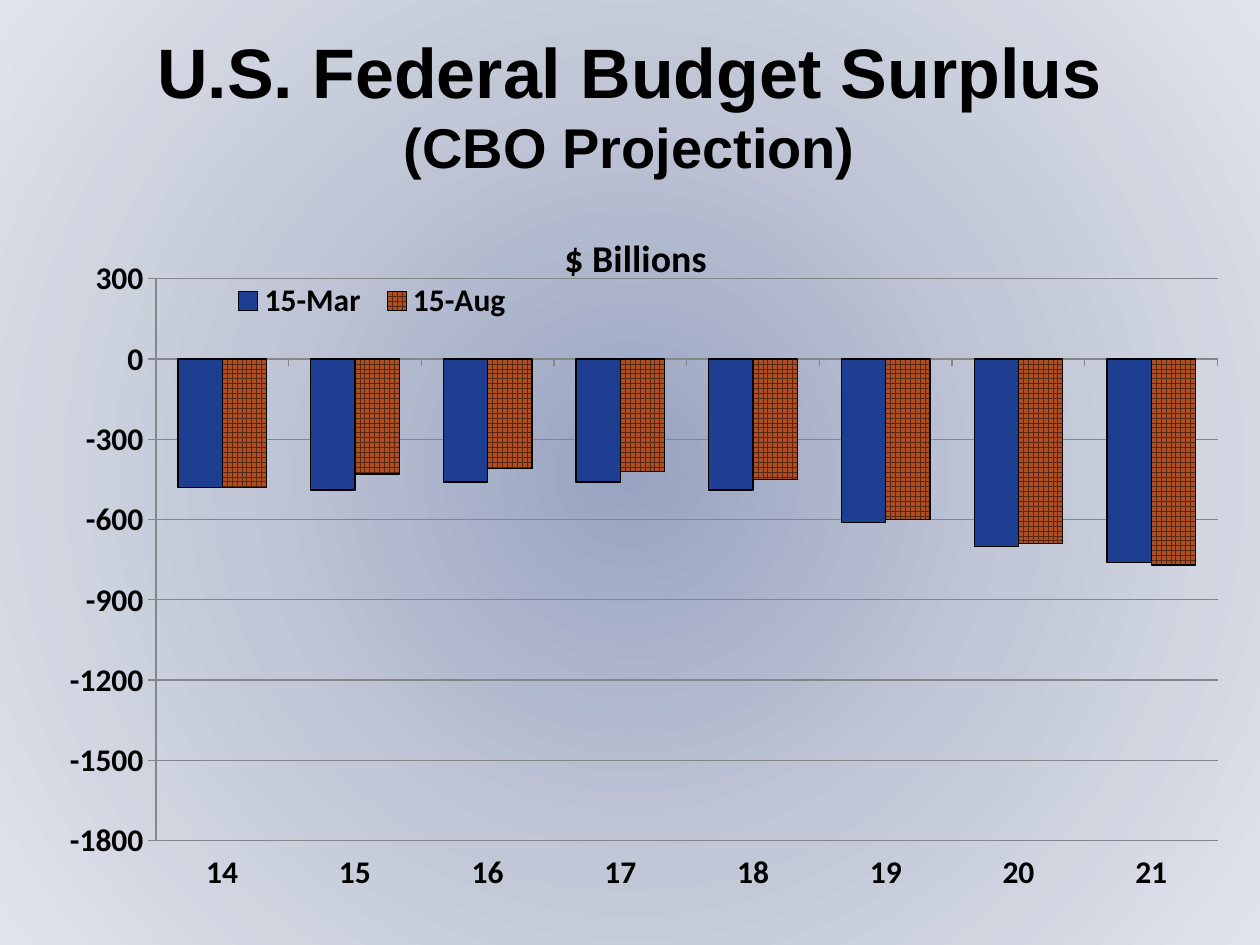
import lxml.etree
import pptx
import pptx.chart.data
import pptx.dml.color
import pptx.enum.chart
import pptx.enum.dml
import pptx.enum.text
import pptx.oxml
import pptx.oxml.ns
import pptx.util

Inches = pptx.util.Inches
Pt = pptx.util.Pt
RGBColor = pptx.dml.color.RGBColor
qn = pptx.oxml.ns.qn

BLACK = RGBColor(0x00, 0x00, 0x00)
GRAY = RGBColor(0x86, 0x86, 0x86)
BLUE = RGBColor(0x1E, 0x3E, 0x92)
RUST = RGBColor(0xAE, 0x4E, 0x22)
BROWN = RGBColor(0x57, 0x27, 0x11)
BACKDROP = [
    (0, RGBColor(0x98, 0xA3, 0xC1)),
    (50, RGBColor(0xC2, 0xC7, 0xD7)),
    (100, RGBColor(0xE1, 0xE4, 0xEB)),
]


def write_line(para, text, size, font="Arial", bold=True, color=BLACK):
    para.alignment = pptx.enum.text.PP_ALIGN.CENTER
    span = para.add_run()
    span.text = text
    span.font.size = Pt(size)
    span.font.name = font
    span.font.bold = bold
    span.font.color.rgb = color


def place_part(layout, **settings):
    for child in list(layout):
        layout.remove(child)
    manual = lxml.etree.SubElement(layout, qn("c:manualLayout"))
    for name, value in settings.items():
        lxml.etree.SubElement(manual, qn(f"c:{name}")).set("val", str(value))


deck = pptx.Presentation()
deck.slide_width = Inches(10)
deck.slide_height = Inches(7.5)
page = deck.slides.add_slide(deck.slide_layouts[6])

page.background.fill.gradient()
gradient = page.element.xpath(".//p:bg//a:gradFill")[0]
for child in list(gradient):
    gradient.remove(child)
stops = lxml.etree.SubElement(gradient, qn("a:gsLst"))
for position, color in BACKDROP:
    stop = lxml.etree.SubElement(stops, qn("a:gs"), pos=str(position * 1000))
    lxml.etree.SubElement(stop, qn("a:srgbClr"), val=str(color))
shade = lxml.etree.SubElement(gradient, qn("a:path"), path="circle")
center = {side: "50000" for side in "ltrb"}
lxml.etree.SubElement(shade, qn("a:fillToRect"), **center)

box = page.shapes.add_textbox(Inches(0.25), Inches(0.33), Inches(9.49), Inches(1))
box.text_frame.word_wrap = True
box.text_frame.vertical_anchor = pptx.enum.text.MSO_ANCHOR.MIDDLE
write_line(box.text_frame.paragraphs[0], "U.S. Federal Budget Surplus", size=40)
write_line(box.text_frame.add_paragraph(), "(CBO Projection)", size=32)

budget = pptx.chart.data.CategoryChartData(number_format="0")
budget.categories = [str(year) for year in range(14, 22)]
budget.add_series("15-Mar", [-480, -490, -460, -460, -490, -610, -700, -760])
budget.add_series("15-Aug", [-480, -430, -410, -420, -450, -600, -690, -770])
chart = page.shapes.add_chart(
    pptx.enum.chart.XL_CHART_TYPE.COLUMN_CLUSTERED,
    Inches(0.25), Inches(1.5), Inches(9.49), Inches(5.66), budget,
).chart
chart.font.size = Pt(18)
chart.font.name = "Calibri"
chart.font.bold = True
chart.font.color.rgb = BLACK

chart.has_title = True
title = chart.chart_title
write_line(title.text_frame.paragraphs[0], "$ Billions", size=21.6, font="Calibri")
title.include_in_layout = False

chart.has_legend = True
legend = chart.legend
legend.position = pptx.enum.chart.XL_LEGEND_POSITION.TOP
legend.include_in_layout = False

plot = chart.plots[0]
plot.gap_width = 100
plot.overlap = 0
plot.vary_by_categories = False
march, august = plot.series
march.format.fill.solid()
march.format.fill.fore_color.rgb = BLUE
august.format.fill.patterned()
august.format.fill.pattern = pptx.enum.dml.MSO_PATTERN.LARGE_GRID
august.format.fill.fore_color.rgb = BROWN
august.format.fill.back_color.rgb = RUST
for series in plot.series:
    series.invert_if_negative = False
    series.format.line.color.rgb = BLACK
    series.format.line.width = Pt(0.75)

years = chart.category_axis
years.tick_label_position = pptx.enum.chart.XL_TICK_LABEL_POSITION.LOW
amounts = chart.value_axis
amounts.minimum_scale = -1800
amounts.maximum_scale = 300
amounts.major_unit = 300
amounts.has_major_gridlines = True
amounts.tick_labels.number_format = "0"
amounts.tick_labels.number_format_is_linked = False
for axis in (years, amounts):
    axis.major_tick_mark = pptx.enum.chart.XL_TICK_MARK.OUTSIDE
    axis.minor_tick_mark = pptx.enum.chart.XL_TICK_MARK.NONE
for part in (years, amounts, amounts.major_gridlines):
    part.format.line.color.rgb = GRAY
    part.format.line.width = Pt(0.75)

parts = [
    ("c:title", "c:overlay", dict(xMode="edge", yMode="edge", x=0.44, y=0.05)),
    ("c:legend", "c:overlay",
     dict(xMode="edge", yMode="edge", x=0.16, y=0.13, w=0.25, h=0.05)),
    ("c:plotArea", "c:barChart",
     dict(layoutTarget="inner", xMode="edge", yMode="edge",
          x=0.104, y=0.126, w=0.888, h=0.788)),
]
for owner_tag, follower_tag, settings in parts:
    owner = next(chart.element.iter(qn(owner_tag)))
    layout = owner.find(qn("c:layout"))
    if layout is None:
        layout = pptx.oxml.parse_xml(
            f'<c:layout xmlns:c="{pptx.oxml.ns.nsuri("c")}"/>'
        )
        owner.find(qn(follower_tag)).addprevious(layout)
    place_part(layout, **settings)

deck.save("out.pptx")
